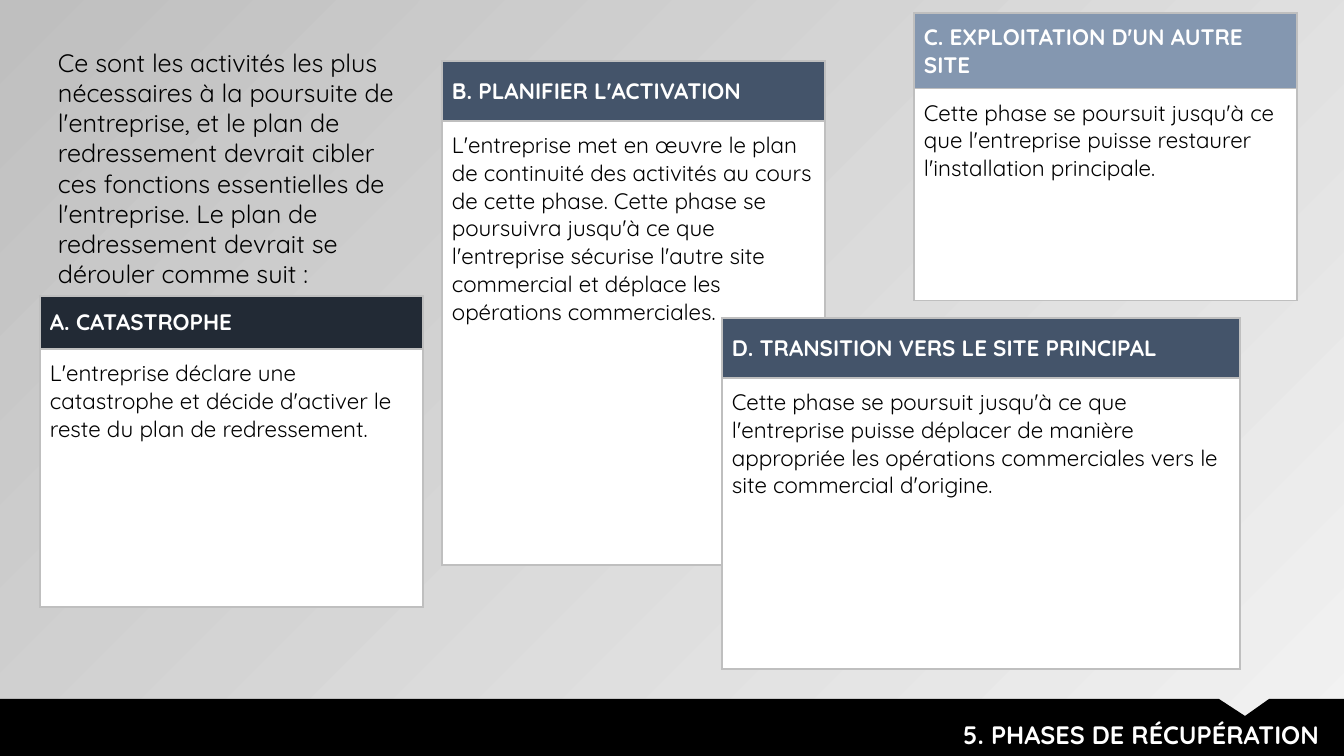
import pptx
import pptx.dml.color
import pptx.enum.text
import pptx.oxml
import pptx.oxml.ns
import pptx.util

RGB = pptx.dml.color.RGBColor
ANCHOR = pptx.enum.text.MSO_ANCHOR
EMU_PER_PX = 914400 / 100.8
SLIDE_W, SLIDE_H = 1344, 756
FONT = "Quicksand"

WHITE = RGB(0xFF, 0xFF, 0xFF)
BLACK = RGB(0x00, 0x00, 0x00)
LIGHT_GREY = RGB(0xF2, 0xF2, 0xF2)
GREY = RGB(0xBF, 0xBF, 0xBF)
NAVY = RGB(0x22, 0x2A, 0x35)
SLATE = RGB(0x44, 0x54, 0x6A)
STEEL = RGB(0x84, 0x97, 0xB0)

INTRO = (
    "Ce sont les activités les plus nécessaires à la poursuite de l'entreprise, "
    "et le plan de redressement devrait cibler ces fonctions essentielles de "
    "l'entreprise. Le plan de redressement devrait se dérouler comme suit :"
)

# heading, description, heading colour, (left, top, width), (heading height, body height)
PHASES = [
    ("C. EXPLOITATION D'UN AUTRE SITE",
     "Cette phase se poursuit jusqu'à ce que l'entreprise puisse restaurer "
     "l'installation principale.",
     STEEL, (914, 13, 383), (60, 212)),
    ("B. PLANIFIER L'ACTIVATION",
     "L'entreprise met en œuvre le plan de continuité des activités au cours de "
     "cette phase. Cette phase se poursuivra jusqu'à ce que l'entreprise sécurise "
     "l'autre site commercial et déplace les opérations commerciales.",
     SLATE, (442, 61, 383), (60, 444)),
    ("D. TRANSITION VERS LE SITE PRINCIPAL",
     "Cette phase se poursuit jusqu'à ce que l'entreprise puisse déplacer de "
     "manière appropriée les opérations commerciales vers le site commercial "
     "d'origine.",
     SLATE, (722, 318, 518), (60, 291)),
    ("A. CATASTROPHE",
     "L'entreprise déclare une catastrophe et décide d'activer le reste du plan "
     "de redressement.",
     NAVY, (40, 296, 383), (53, 258)),
]


def px(length):
    return pptx.util.Emu(round(length * EMU_PER_PX))


def write(frame, text, size, color, bold=False):
    run = frame.paragraphs[0].add_run()
    run.text = text
    run.font.name = FONT
    run.font.size = pptx.util.Pt(size)
    run.font.bold = bold
    run.font.color.rgb = color


def paint_background(slide):
    fill = slide.background.fill
    fill.gradient()
    fill.gradient_angle = 135
    for stop, color in zip(fill.gradient_stops, (LIGHT_GREY, GREY)):
        stop.color.rgb = color


def add_borders(cell):
    """Draw the four sides; they must come before the fill in the cell's XML."""
    properties = cell._tc.get_or_add_tcPr()
    for position, side in enumerate(("lnL", "lnR", "lnT", "lnB")):
        properties.insert(position, pptx.oxml.parse_xml(
            f'<a:{side} {pptx.oxml.ns.nsdecls("a")} w="12700"><a:solidFill>'
            f'<a:srgbClr val="{GREY}"/></a:solidFill></a:{side}>'))


def fill_cell(cell, text, fill, color, bold, anchor):
    cell.fill.solid()
    cell.fill.fore_color.rgb = fill
    cell.vertical_anchor = anchor
    cell.margin_left = cell.margin_right = px(10)
    cell.margin_top = cell.margin_bottom = px(10)
    write(cell.text_frame, text, 16, color, bold)
    add_borders(cell)


def add_phase(slide, heading, description, color, place, heights):
    left, top, width = place
    card = slide.shapes.add_table(
        2, 1, px(left), px(top), px(width), px(sum(heights))).table
    card.first_row = False
    card.horz_banding = False
    for row, height in zip(card.rows, heights):
        row.height = px(height)
    fill_cell(card.cell(0, 0), heading, color, WHITE, True, ANCHOR.MIDDLE)
    fill_cell(card.cell(1, 0), description, WHITE, BLACK, False, ANCHOR.TOP)


def add_footer_bar(slide):
    """Black band with a notch in its upper edge."""
    outline = [(1219, 699), (1245, 716), (1269, 699), (SLIDE_W, 699),
               (SLIDE_W, SLIDE_H), (0, SLIDE_H)]
    builder = slide.shapes.build_freeform(0, 699, scale=EMU_PER_PX)
    builder.add_line_segments(outline, close=True)
    bar = builder.convert_to_shape()
    bar.shadow.inherit = False
    bar.fill.solid()
    bar.fill.fore_color.rgb = BLACK
    bar.line.fill.background()


def place_title(slide, text):
    """Set the title in the footer bar, in front of it."""
    title = slide.shapes.title
    title.left, title.top, title.width, title.height = map(px, (24, 714, 1305, 42))
    frame = title.text_frame
    frame.auto_size = pptx.enum.text.MSO_AUTO_SIZE.NONE
    frame.vertical_anchor = ANCHOR.TOP
    write(frame, text, 18, WHITE, True)
    frame.paragraphs[0].alignment = pptx.enum.text.PP_ALIGN.RIGHT
    title._element.getparent().append(title._element)


def add_intro(slide):
    intro = slide.shapes.add_textbox(px(48), px(42), px(366), px(252))
    intro.text_frame.word_wrap = True
    write(intro.text_frame, INTRO, 18, BLACK)


def main():
    deck = pptx.Presentation()
    deck.slide_width, deck.slide_height = px(SLIDE_W), px(SLIDE_H)
    slide = deck.slides.add_slide(deck.slide_layouts[5])
    paint_background(slide)
    for phase in PHASES:
        add_phase(slide, *phase)
    add_footer_bar(slide)
    place_title(slide, "5. PHASES DE RÉCUPÉRATION")
    add_intro(slide)
    deck.save("out.pptx")


if __name__ == "__main__":
    main()
